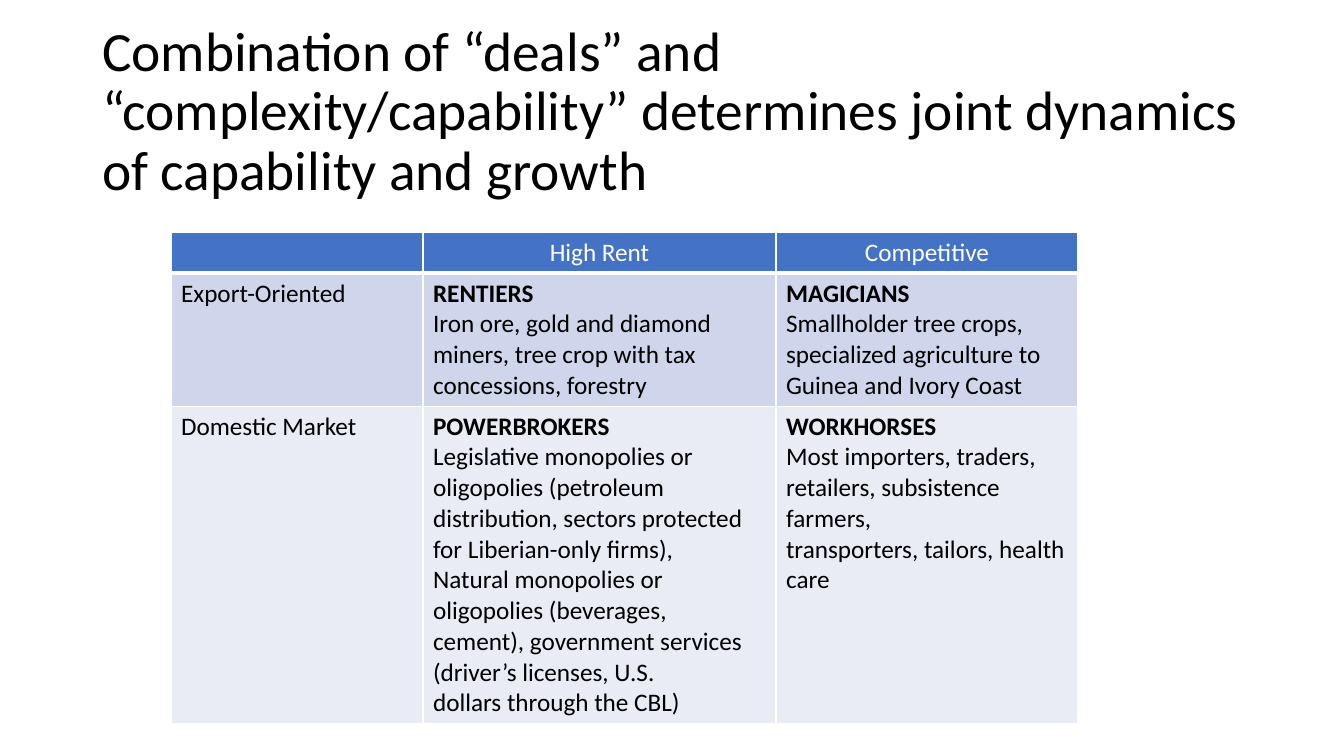
from dataclasses import dataclass

from lxml.etree import SubElement
from pptx import Presentation
from pptx.dml.color import RGBColor
from pptx.enum.text import MSO_ANCHOR, MSO_AUTO_SIZE, PP_ALIGN
from pptx.oxml.ns import qn
from pptx.util import Pt

PX = 914400 / 100.8


@dataclass(frozen=True)
class Theme:
    """Colours, font and type sizes of the slide."""
    font: str = "Calibri"
    head: str = "4472C4"
    bands: tuple = ("CFD5EA", "E9EBF5")
    ink: str = "000000"
    white: str = "FFFFFF"
    title: float = 39.6
    body: float = 18


THEME = Theme()


def style(para, size, color, bold=False):
    """Format every run of a paragraph."""
    for run in para.runs:
        font = run.font
        font.name, font.size, font.bold = THEME.font, Pt(size), bold
        font.color.rgb = RGBColor.from_string(color)


def rule(cell, base):
    """Draw white borders round a cell, the bottom one base points wide."""
    props = cell._tc.get_or_add_tcPr()
    for side, width in (("L", 1), ("R", 1), ("T", 1), ("B", base)):
        line = SubElement(props, qn(f"a:ln{side}"), w=str(Pt(width)))
        fill = SubElement(line, qn("a:solidFill"))
        SubElement(fill, qn("a:srgbClr"), val=THEME.white)


deck = Presentation()
deck.slide_width, deck.slide_height = round(1344 * PX), round(756 * PX)
slide = deck.slides.add_slide(deck.slide_layouts[5])

# Title
title = slide.shapes.title
title.left, title.top, title.width, title.height = [
    round(n * PX) for n in (92, 40, 1160, 146)]
frame = title.text_frame
frame.text = ("Combination of “deals” and “complexity/capability” "
              "determines joint dynamics of capability and growth")
frame.word_wrap = True
frame.auto_size = MSO_AUTO_SIZE.NONE
frame.vertical_anchor = MSO_ANCHOR.MIDDLE
para = frame.paragraphs[0]
para.alignment = PP_ALIGN.LEFT
para.line_spacing = 0.9
style(para, THEME.title, THEME.ink)

# Market table: the first line of each inner cell names the group
ROWS = [
    ["", "High Rent", "Competitive"],
    ["Export-Oriented",
     "RENTIERS\nIron ore, gold and diamond\nminers, tree crop with tax\n"
     "concessions, forestry",
     "MAGICIANS\nSmallholder tree crops,\nspecialized agriculture to\n"
     "Guinea and Ivory Coast"],
    ["Domestic Market",
     "POWERBROKERS\nLegislative monopolies or\noligopolies (petroleum\n"
     "distribution, sectors protected\nfor Liberian-only firms),\n"
     "Natural monopolies or\noligopolies (beverages,\n"
     "cement), government services\n(driver’s licenses, U.S.\n"
     "dollars through the CBL)",
     "WORKHORSES\nMost importers, traders,\nretailers, subsistence farmers,\n"
     "transporters, tailors, health\ncare"],
]
WIDTHS = (252, 353, 302)
HEIGHTS = (41, 132, 317)
box = [round(n * PX) for n in (171, 232, sum(WIDTHS), sum(HEIGHTS))]
table = slide.shapes.add_table(len(ROWS), len(WIDTHS), *box).table
for col, width in zip(table.columns, WIDTHS):
    col.width = round(width * PX)
for row, height in zip(table.rows, HEIGHTS):
    row.height = round(height * PX)

for r, texts in enumerate(ROWS):
    top = r == 0
    for c, text in enumerate(texts):
        cell = table.cell(r, c)
        rule(cell, 3 if top else 1)
        cell.fill.solid()
        shade = THEME.head if top else THEME.bands[r - 1]
        cell.fill.fore_color.rgb = RGBColor.from_string(shade)
        cell.text_frame.text = text
        for n, para in enumerate(cell.text_frame.paragraphs):
            para.alignment = PP_ALIGN.CENTER if top else PP_ALIGN.LEFT
            style(para, THEME.body, THEME.white if top else THEME.ink,
                  bold=not top and c > 0 and n == 0)

deck.save("out.pptx")
